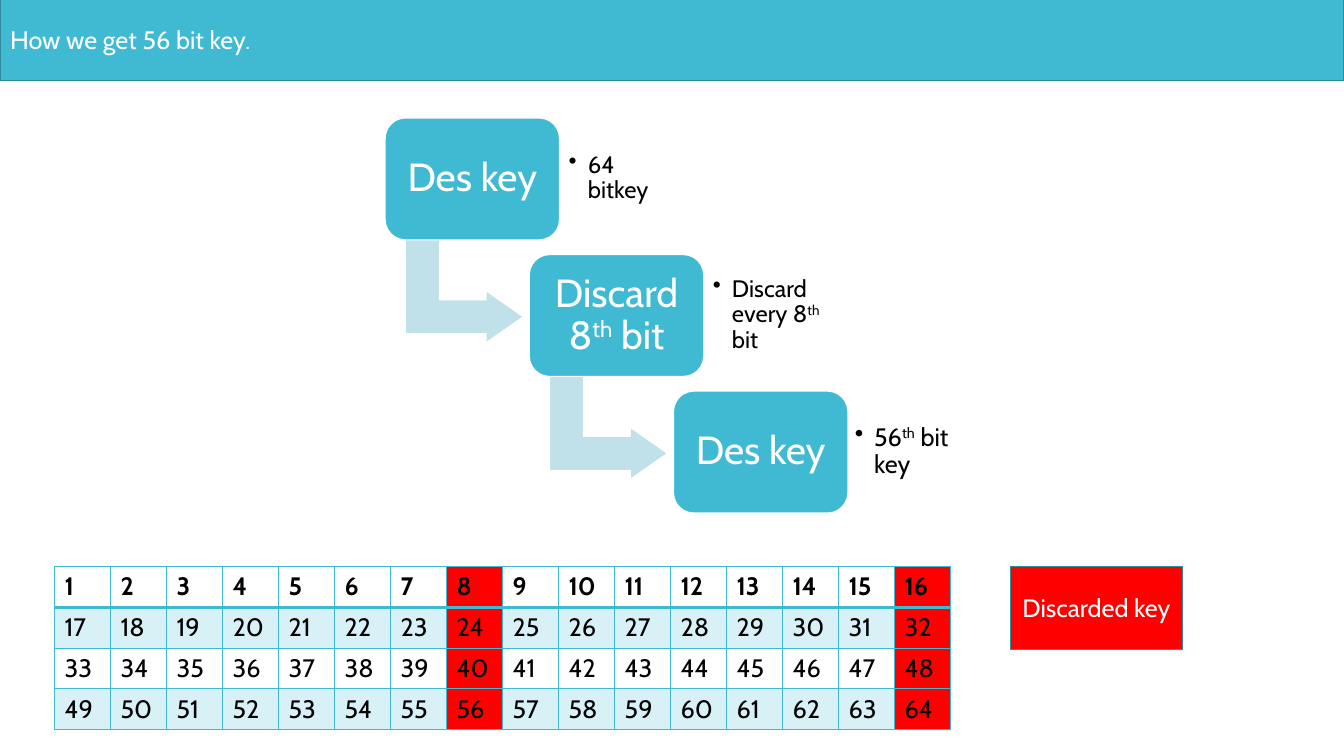
from lxml import etree
from pptx import Presentation
from pptx import util as u
from pptx.dml.color import RGBColor
from pptx.enum import shapes, text
from pptx.oxml import ns

COLORS = {"teal": "40BAD2", "edge": "2F8A9B", "pale": "C0E0EA",
          "red": "FF0000", "white": "FFFFFF", "black": "000000"}
COLS, ROWS, DISCARD = 16, 4, 8

deck = Presentation()
deck.slide_width, deck.slide_height = u.Inches(13.33), u.Inches(7.5)
slide = deck.slides.add_slide(deck.slide_layouts[5])


def write(frame, words, size=18, color="white", align="LEFT", inset=None,
          spacing=1, bold=False, bullet=False):
    """Fill a text frame; text between ^ marks is superscript."""
    frame.word_wrap = True
    frame.vertical_anchor = text.MSO_ANCHOR.MIDDLE
    if inset is not None:
        frame.margin_left = frame.margin_right = u.Inches(inset)
        frame.margin_top = frame.margin_bottom = u.Inches(inset)
    line = frame.paragraphs[0]
    line.alignment = getattr(text.PP_ALIGN, align)
    line.line_spacing = spacing
    for i, part in enumerate(words.split("^")):
        run = line.add_run()
        run.text = part
        run.font.name, run.font.size, run.font.bold = "Cabin", u.Pt(size), bold
        run.font.color.rgb = RGBColor.from_string(COLORS[color])
        if i % 2:
            run.font._element.set("baseline", "30000")
    if bullet:
        props = line._p.get_or_add_pPr()
        props.set("marL", str(u.Inches(0.19)))
        props.set("indent", str(u.Inches(-0.19)))
        etree.SubElement(props, ns.qn("a:buChar"), char="•")


def paint(shape, fill, edge):
    shape.fill.solid()
    shape.fill.fore_color.rgb = RGBColor.from_string(COLORS[fill])
    shape.line.color.rgb = RGBColor.from_string(COLORS[edge])
    shape.line.width = u.Pt(0.85)


# Title bar
title = slide.shapes.title
title.left, title.top = 0, u.Inches(-0.02)
title.width, title.height = deck.slide_width, u.Inches(0.82)
title.text_frame.auto_size = text.MSO_AUTO_SIZE.NONE
paint(title, "teal", "edge")
write(title.text_frame, "How we get 56 bit key.")

# Descending steps, each with its note and an arrow to the next
steps = [("Des key", "64 bitkey", 17, 0.09),
         ("Discard 8^th^ bit", "Discard every 8^th^ bit", 17, 0.09),
         ("Des key", "56^th^ bit key", 18, 0.07)]
for i, (label, note, note_size, note_inset) in enumerate(steps):
    x, y = 3.82 + 1.43 * i, 1.17 + 1.355 * i
    if i < len(steps) - 1:
        arrow = slide.shapes.add_shape(
            shapes.MSO_SHAPE.BENT_UP_ARROW, u.Inches(x + 0.27),
            u.Inches(y + 1.13), u.Inches(1.03), u.Inches(1.17))
        arrow.rotation = 90
        for k, share in enumerate((0.328, 0.25, 0.358)):
            arrow.adjustments[k] = share
        arrow.shadow.inherit = False
        paint(arrow, "pale", "white")
    step = slide.shapes.add_shape(
        shapes.MSO_SHAPE.ROUNDED_RECTANGLE, u.Inches(x), u.Inches(y),
        u.Inches(1.73), u.Inches(1.21))
    step.shadow.inherit = False
    paint(step, "teal", "white")
    write(step.text_frame, label, size=28, align="CENTER", inset=0.06, spacing=0.9)
    remark = slide.shapes.add_textbox(
        u.Inches(x + 1.73), u.Inches(y + 0.11), u.Inches(1.26), u.Inches(0.98))
    write(remark.text_frame, note, size=note_size, color="black",
          inset=note_inset, spacing=0.9, bullet=True)

# Bit table: every eighth column is discarded
bits = slide.shapes.add_table(ROWS, COLS, u.Inches(0.54), u.Inches(5.62),
                              u.Inches(8.89), u.Inches(1.62)).table
bits.first_row = bits.horz_banding = False
for n in range(ROWS * COLS):
    row, col = divmod(n, COLS)
    cell = bits.cell(row, col)
    write(cell.text_frame, str(n + 1), color="black", bold=row == 0)
    cell.vertical_anchor = text.MSO_ANCHOR.TOP
    discarded = (n + 1) % DISCARD == 0
    if discarded or row % 2:
        cell.fill.solid()
        cell.fill.fore_color.rgb = RGBColor.from_string(
            COLORS["red" if discarded else "teal"])
    else:
        cell.fill.background()
    props = cell._tc.get_or_add_tcPr()
    if row % 2 and not discarded:
        tint = props.find(".//" + ns.qn("a:srgbClr"))
        etree.SubElement(tint, ns.qn("a:alpha"), val="20000")
    # Borders come before the fill, thicker under the first row
    for k, side in enumerate(("lnL", "lnR", "lnT", "lnB")):
        thick = (row, side) in ((0, "lnB"), (1, "lnT"))
        border = etree.Element(ns.qn("a:" + side), w=str(u.Pt(2 if thick else 1)))
        solid = etree.SubElement(border, ns.qn("a:solidFill"))
        etree.SubElement(solid, ns.qn("a:srgbClr"), val=COLORS["teal"])
        props.insert(k, border)

# Legend
legend = slide.shapes.add_shape(shapes.MSO_SHAPE.RECTANGLE, u.Inches(10.02),
                                u.Inches(5.62), u.Inches(1.71), u.Inches(0.82))
legend.shadow.inherit = False
paint(legend, "red", "edge")
write(legend.text_frame, "Discarded key", align="CENTER")

deck.save("out.pptx")
